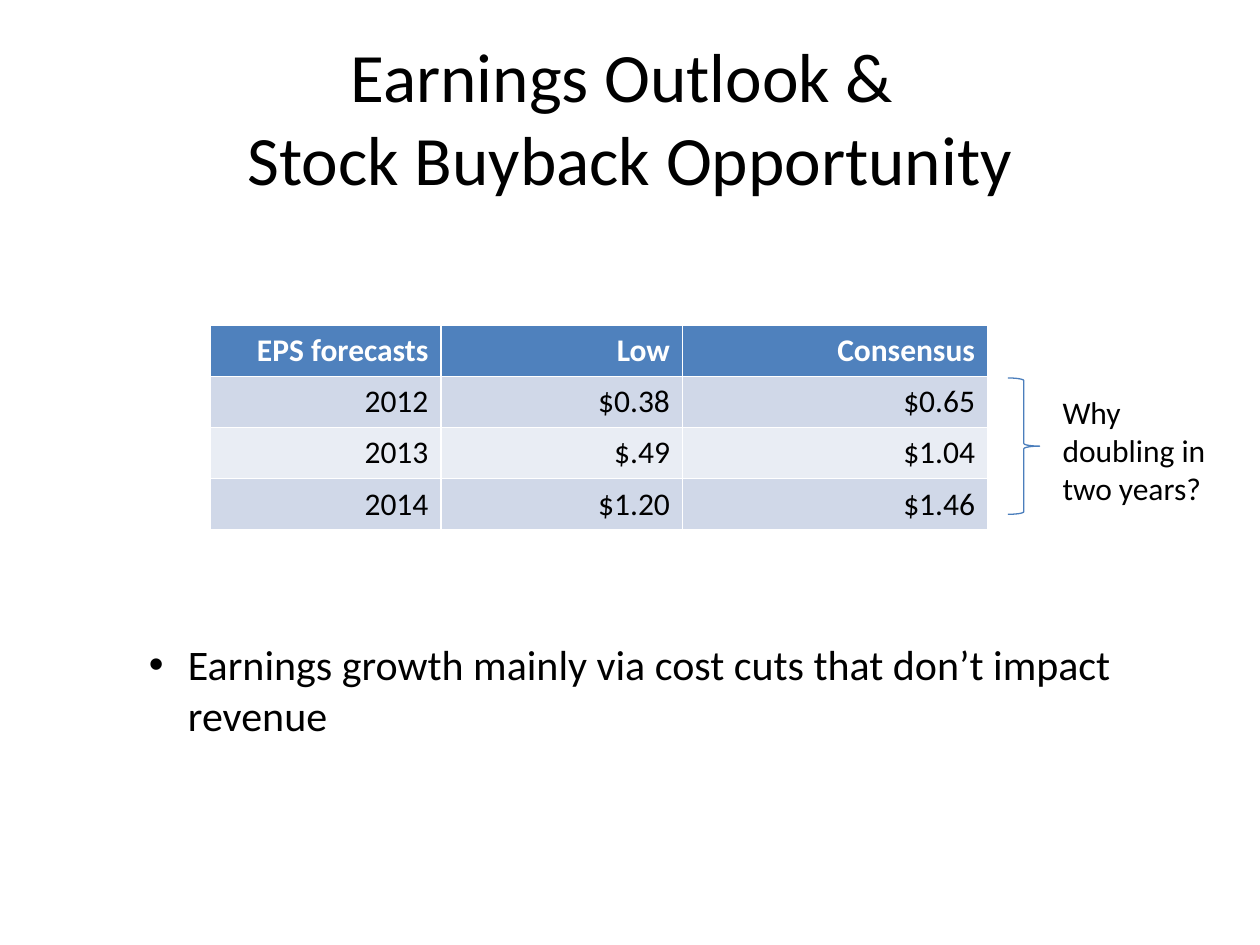
from lxml.etree import SubElement
from pptx import Presentation
from pptx.dml.color import RGBColor
from pptx.enum.shapes import MSO_SHAPE
from pptx.enum.text import MSO_ANCHOR, MSO_AUTO_SIZE, PP_ALIGN
from pptx.oxml.ns import qn
from pptx.util import Cm, Pt

BLACK = RGBColor(0x00, 0x00, 0x00)
WHITE = RGBColor(0xFF, 0xFF, 0xFF)
HEADER_BLUE = RGBColor(0x4F, 0x81, 0xBD)
BAND_DARK = RGBColor(0xD0, 0xD8, 0xE8)
BAND_LIGHT = RGBColor(0xE9, 0xED, 0xF4)
BRACE_BLUE = RGBColor(0x4B, 0x7E, 0xBC)


def format_text(para, size, color=BLACK, bold=False):
    for span in para.runs:
        for name, value in {"name": "Calibri", "size": Pt(size), "bold": bold}.items():
            setattr(span.font, name, value)
        span.font.color.rgb = color


def add_text(page, left, top, width, height, text, size):
    box = page.shapes.add_textbox(Cm(left), Cm(top), Cm(width), Cm(height))
    box.text_frame.word_wrap = True
    box.text_frame.auto_size = MSO_AUTO_SIZE.SHAPE_TO_FIT_TEXT
    para = box.text_frame.paragraphs[0]
    para.text = text
    format_text(para, size)
    return para


deck = Presentation()
deck.slide_width, deck.slide_height = Cm(25.4), Cm(19.05)
page = deck.slides.add_slide(deck.slide_layouts[5])

title = page.shapes.title
placement = {"left": 1.27, "top": 0.76, "width": 22.86, "height": 3.18}
for name, value in placement.items():
    setattr(title, name, Cm(value))
title.text_frame.text = "Earnings Outlook & \vStock Buyback Opportunity"
title.text_frame.auto_size = MSO_AUTO_SIZE.NONE
title.text_frame.vertical_anchor = MSO_ANCHOR.MIDDLE
title_para = title.text_frame.paragraphs[0]
title_para.alignment = PP_ALIGN.CENTER
format_text(title_para, 39.6)

forecasts = [
    ("EPS forecasts", "Low", "Consensus"),
    ("2012", "$0.38", "$0.65"),
    ("2013", "$.49", "$1.04"),
    ("2014", "$1.20", "$1.46"),
]
column_widths = [4.65, 4.87, 6.15]
row_height = 1.03
table = page.shapes.add_table(
    len(forecasts), len(column_widths), Cm(4.24), Cm(6.56),
    Cm(sum(column_widths)), Cm(row_height * len(forecasts)),
).table
for column, width in zip(table.columns, column_widths):
    column.width = Cm(width)
for row_number, values in enumerate(forecasts):
    table.rows[row_number].height = Cm(row_height)
    is_header = row_number == 0
    band = BAND_DARK if row_number % 2 else BAND_LIGHT
    for column_number, value in enumerate(values):
        cell = table.cell(row_number, column_number)
        cell.fill.solid()
        cell.fill.fore_color.rgb = HEADER_BLUE if is_header else band
        para = cell.text_frame.paragraphs[0]
        para.text = value
        para.alignment = PP_ALIGN.RIGHT
        format_text(para, 18, WHITE if is_header else BLACK, is_header)

brace = page.shapes.add_shape(
    MSO_SHAPE.RIGHT_BRACE, Cm(20.32), Cm(7.62), Cm(0.64), Cm(2.75))
brace.shadow.inherit = False
brace.fill.background()
brace.line.color.rgb = BRACE_BLUE
brace.line.width = Pt(0.75)

add_text(page, 21.17, 7.8, 4.02, 2.57, "Why doubling in two years?", 18)

bullet = add_text(
    page, 2.75, 12.75, 21.59, 2.31,
    "Earnings growth mainly via cost cuts that don’t impact revenue", 24)
bullet_format = bullet._p.get_or_add_pPr()
bullet_format.set("marL", str(Cm(0.79)))
bullet_format.set("indent", str(-Cm(0.79)))
SubElement(bullet_format, qn("a:buFont"), typeface="Arial")
SubElement(bullet_format, qn("a:buChar"), char="•")

deck.save("out.pptx")
